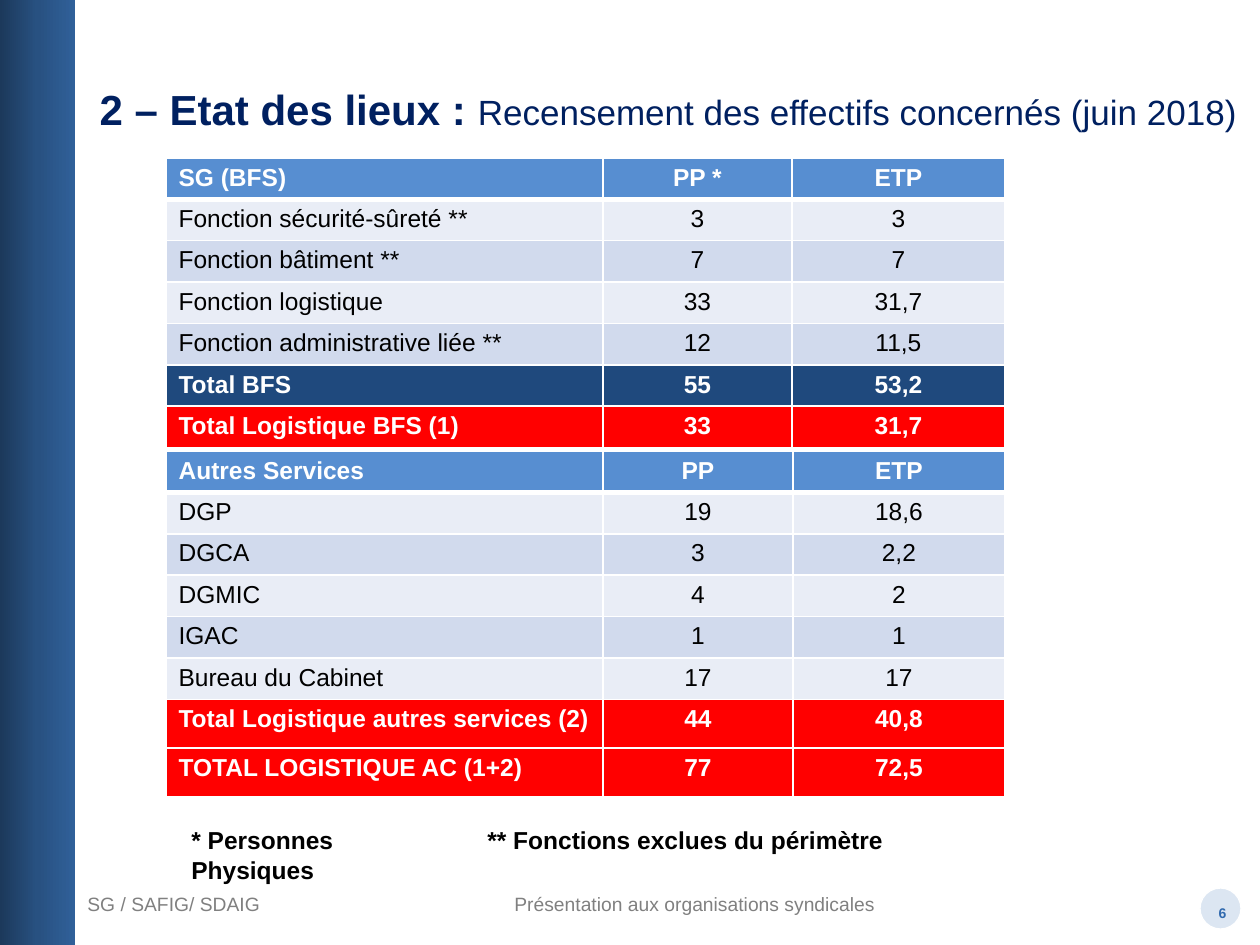
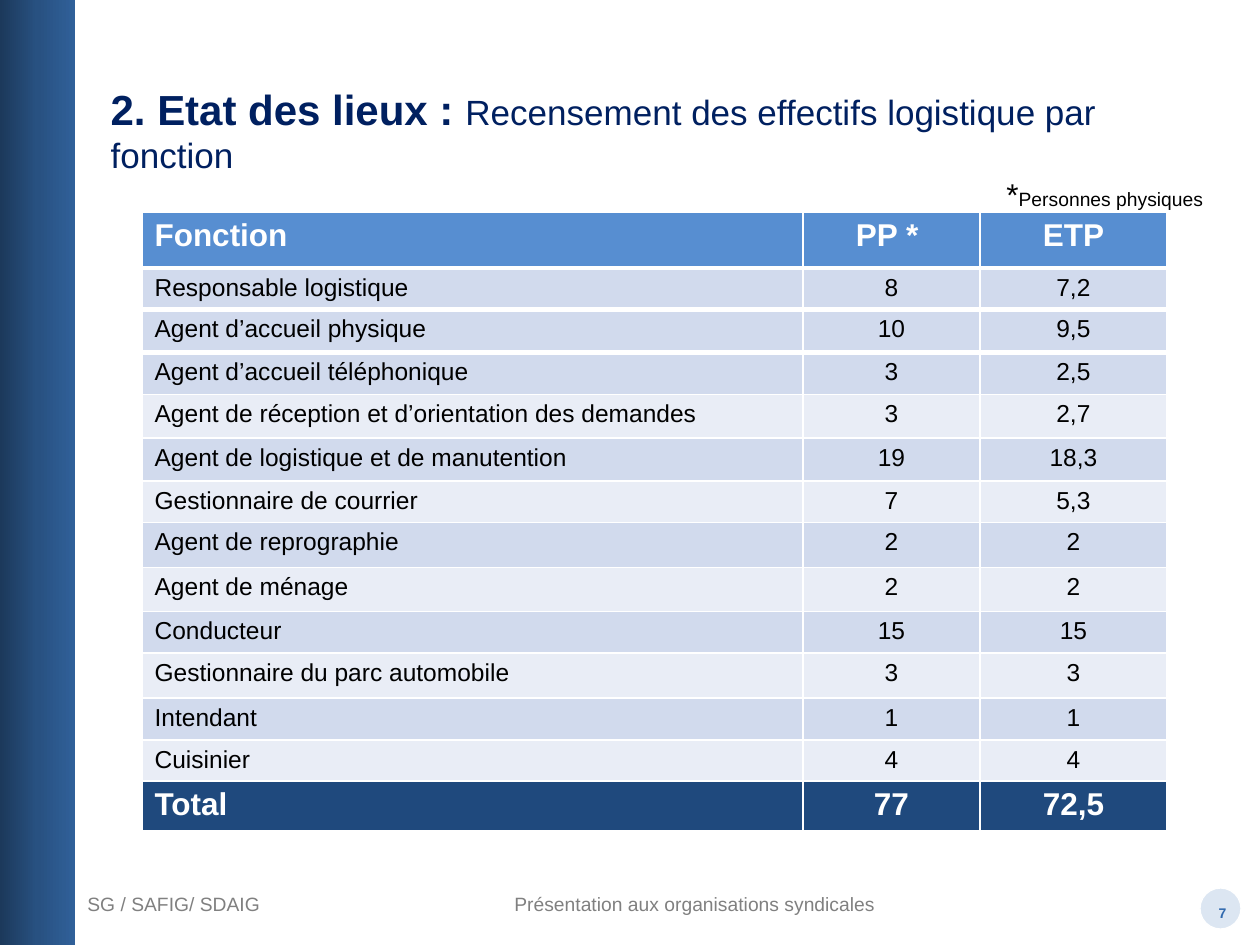
from lxml import etree
from copy import deepcopy

from pptx import Presentation
from pptx.dml.color import RGBColor
from pptx.enum.shapes import MSO_SHAPE
from pptx.enum.text import MSO_ANCHOR, MSO_AUTO_SIZE, PP_ALIGN
from pptx.oxml.ns import qn
from pptx.util import Emu, Pt

RECTANGLE, ELLIPSE = MSO_SHAPE.RECTANGLE, MSO_SHAPE.OVAL
LEFT, CENTER = PP_ALIGN.LEFT, PP_ALIGN.CENTER
TOP = MSO_ANCHOR.TOP
NO_AUTOFIT = MSO_AUTO_SIZE.NONE

EMU_PER_PX = 914400 / 126
SLIDE_WIDTH, SLIDE_HEIGHT = 1260, 945
TITLE_ONLY_LAYOUT = 5

FONT = "Arial"
WHITE, BLACK, NAVY, GREY = "FFFFFF", "000000", "002060", "808080"
PAGE_BLUE, PAGE_DISC = "3069AE", "DCE6F2"
BAND_STOPS = [(0, "1C395B"), (0.5, "285181"), (1, "306099")]

# Row kind: fill, text colour, bold
ROW_STYLES = {
    "header": ("578ED1", WHITE, True),
    "light": ("E9EDF6", BLACK, False),
    "dark": ("D1DAED", BLACK, False),
    "total": ("1F497D", WHITE, True),
    "logistics": ("FF0000", WHITE, True),
}
THIN, THICK = 0.96, 3


def px(length):
    return Emu(round(length * EMU_PER_PX))


def rgb(hex_colour):
    return RGBColor.from_string(hex_colour)


class Deck:
    """Holds the shared style and the slide being built."""

    def __init__(self):
        self.presentation = Presentation()
        self.presentation.slide_width = px(SLIDE_WIDTH)
        self.presentation.slide_height = px(SLIDE_HEIGHT)
        self.slide = None

    def new_slide(self, number):
        layout = self.presentation.slide_layouts[TITLE_ONLY_LAYOUT]
        self.slide = self.presentation.slides.add_slide(layout)
        # Side band
        band = self.shape(RECTANGLE, 0, 0, 75, SLIDE_HEIGHT)
        band.line.fill.background()
        band.fill.gradient()
        band.fill.gradient_angle = 0
        stop_list = band.element.spPr.find(qn("a:gradFill")).find(qn("a:gsLst"))
        stop_list.insert(1, deepcopy(stop_list[0]))
        for stop, (position, colour) in zip(band.fill.gradient_stops, BAND_STOPS):
            stop.position = position
            stop.color.rgb = rgb(colour)
        # Footer and page number
        self.text(75, 886, 271, 35, [("SG / SAFIG/ SDAIG", 11, False)], GREY)
        self.text(502, 886, 390, 35,
                  [("Présentation aux organisations syndicales", 11, False)], GREY)
        disc = self.shape(ELLIPSE, 1200, 888, 41, 41)
        disc.fill.solid()
        disc.fill.fore_color.rgb = rgb(PAGE_DISC)
        disc.line.color.rgb = rgb(WHITE)
        disc.line.width = Pt(0.75)
        self.text(1176, 898, 93, 29, [(str(number), 8, True)], PAGE_BLUE, CENTER)

    def shape(self, kind, left, top, width, height):
        shape = self.slide.shapes.add_shape(
            kind, px(left), px(top), px(width), px(height))
        shape.shadow.inherit = False
        return shape

    def add_runs(self, text_frame, runs, colour, alignment=LEFT):
        """Fill one paragraph with (text, size, bold) runs."""
        paragraph = text_frame.paragraphs[0]
        paragraph.alignment = alignment
        for text, size, bold in runs:
            run = paragraph.add_run()
            run.text = text
            run.font.name = FONT
            run.font.size = Pt(size)
            run.font.bold = bold
            run.font.color.rgb = rgb(colour)

    def text(self, left, top, width, height, runs, colour=BLACK, alignment=LEFT):
        box = self.slide.shapes.add_textbox(
            px(left), px(top), px(width), px(height))
        box.text_frame.word_wrap = True
        self.add_runs(box.text_frame, runs, colour, alignment)

    def title(self, left, width, height, heading, subject):
        title = self.slide.shapes.title
        title.left, title.top = px(left), px(77)
        title.width, title.height = px(width), px(height)
        title.text_frame.auto_size = NO_AUTOFIT
        title.text_frame.vertical_anchor = TOP
        self.add_runs(title.text_frame,
                      [(heading, 24, True), (subject, 20, False)], NAVY)

    def borders(self, cell, top, bottom):
        properties = cell._tc.get_or_add_tcPr()
        for side, width in (("L", THIN), ("R", THIN), ("T", top), ("B", bottom)):
            line = etree.SubElement(properties, qn(f"a:ln{side}"), w=str(int(Pt(width))))
            fill = etree.SubElement(line, qn("a:solidFill"))
            etree.SubElement(fill, qn("a:srgbClr"), val=WHITE)

    def table(self, left, top, widths, heights, kinds, rows,
              strong_size=14, thick_below=(0,)):
        table = self.slide.shapes.add_table(
            len(rows), len(widths), px(left), px(top),
            px(sum(widths)), px(sum(heights))).table
        table.first_row = table.horz_banding = False
        for column, width in zip(table.columns, widths):
            column.width = px(width)
        for index, (kind, values) in enumerate(zip(kinds, rows)):
            table.rows[index].height = px(heights[index])
            fill, colour, bold = ROW_STYLES[kind]
            size = strong_size if bold else 14
            line_above = THICK if index - 1 in thick_below else THIN
            line_below = THICK if index in thick_below else THIN
            for column_index, value in enumerate(values):
                cell = table.cell(index, column_index)
                cell.margin_top = cell.margin_bottom = px(6)
                self.borders(cell, line_above, line_below)
                cell.fill.solid()
                cell.fill.fore_color.rgb = rgb(fill)
                self.add_runs(cell.text_frame, [(value, size, bold)], colour,
                              CENTER if column_index else LEFT)


def staff_by_service(deck):
    deck.new_slide(6)
    deck.title(87, 1173, 81, "2 – Etat des lieux : ",
               "Recensement des effectifs concernés (juin 2018)")
    # Other services
    deck.table(
        166, 451, [437, 190, 212], [40] + [41] * 5 + [49] * 2,
        ["header"] + ["light", "dark"] * 2 + ["light"] + ["logistics"] * 2,
        [("Autres Services", "PP", "ETP"),
         ("DGP", "19", "18,6"),
         ("DGCA", "3", "2,2"),
         ("DGMIC", "4", "2"),
         ("IGAC", "1", "1"),
         ("Bureau du Cabinet", "17", "17"),
         ("Total Logistique autres services (2)", "44", "40,8"),
         ("TOTAL LOGISTIQUE AC (1+2)", "77", "72,5")])
    # General secretariat
    deck.table(
        166, 158, [437, 189, 213], [40] * 7,
        ["header"] + ["light", "dark"] * 2 + ["total", "logistics"],
        [("SG (BFS)", "PP *", "ETP"),
         ("Fonction sécurité-sûreté **", "3", "3"),
         ("Fonction bâtiment **", "7", "7"),
         ("Fonction logistique", "33", "31,7"),
         ("Fonction administrative liée **", "12", "11,5"),
         ("Total BFS", "55", "53,2"),
         ("Total Logistique BFS (1)", "33", "31,7")])
    # Footnotes
    deck.text(179, 819, 280, 59, [("* Personnes Physiques", 14, True)])
    deck.text(475, 819, 467, 59, [("** Fonctions exclues du périmètre", 14, True)])


def staff_by_function(deck):
    deck.new_slide(7)
    deck.title(98, 1143, 103, "2. Etat des lieux : ",
               "Recensement des effectifs logistique par fonction")
    deck.table(
        142, 212, [661, 177, 187],
        [56, 40, 43, 42, 44, 43, 40, 45, 44, 40, 45, 42, 40, 49],
        ["header", "dark", "dark"] + ["dark", "light"] * 5 + ["total"],
        [("Fonction", "PP * ", "ETP"),
         ("Responsable logistique", "8", "7,2"),
         ("Agent d’accueil physique", "10", "9,5"),
         ("Agent d’accueil téléphonique", "3", "2,5"),
         ("Agent de réception et d’orientation des demandes", "3", "2,7"),
         ("Agent de logistique et de manutention", "19", "18,3"),
         ("Gestionnaire de courrier", "7", "5,3"),
         ("Agent de reprographie", "2", "2"),
         ("Agent de ménage", "2", "2"),
         ("Conducteur", "15", "15"),
         ("Gestionnaire du parc automobile", "3", "3"),
         ("Intendant", "1", "1"),
         ("Cuisinier", "4", "4"),
         ("Total", "77", "72,5")],
        strong_size=18, thick_below=(0, 1, 2))
    # Footnote
    deck.text(994, 169, 247, 50, [("*", 18, False), ("Personnes physiques", 11, False)])


def main():
    deck = Deck()
    staff_by_service(deck)
    staff_by_function(deck)
    deck.presentation.save("out.pptx")


if __name__ == "__main__":
    main()
